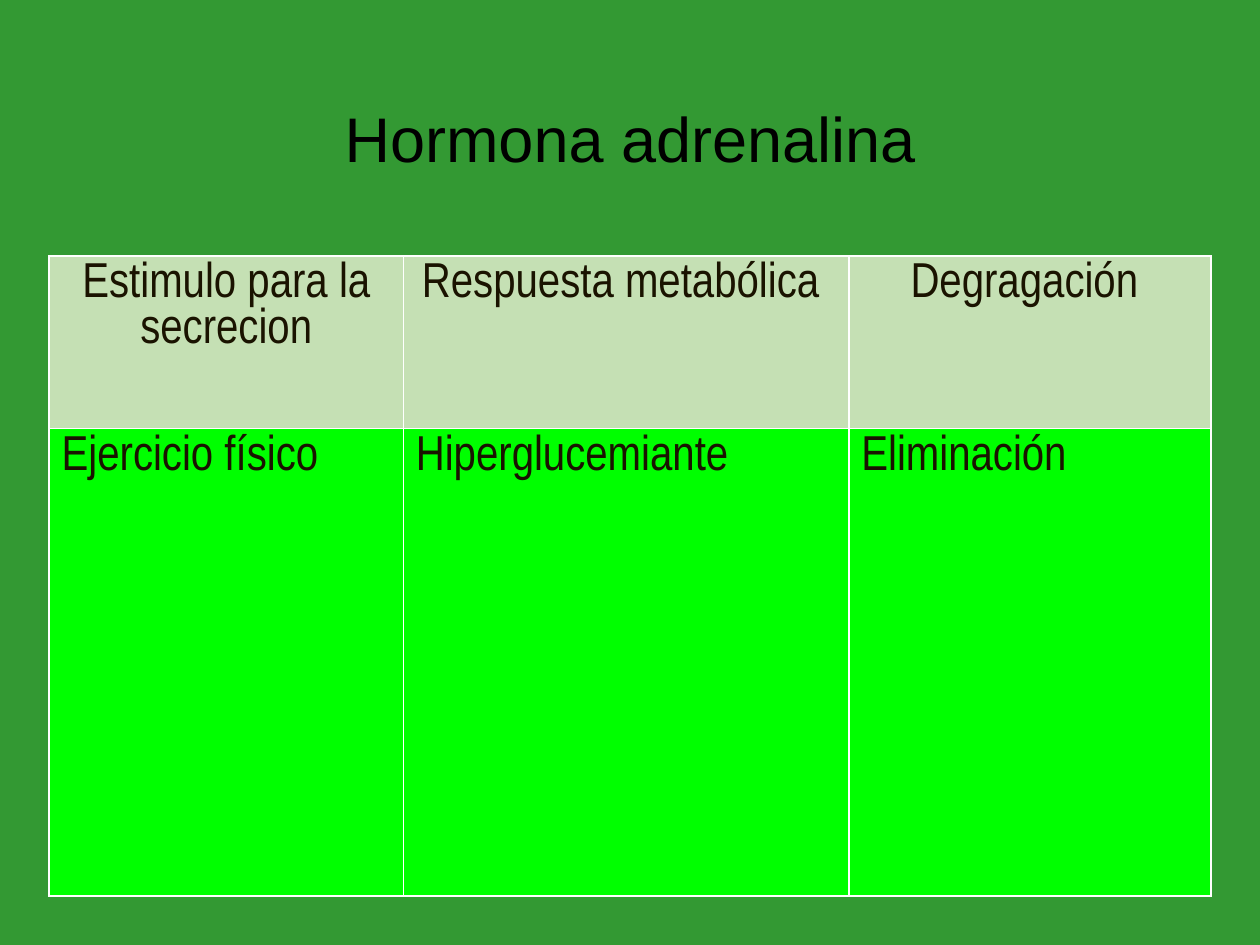
from dataclasses import dataclass

from lxml import etree
from pptx import Presentation
from pptx import util as u
from pptx.dml.color import RGBColor
from pptx.enum import text
from pptx.oxml.ns import qn


@dataclass(frozen=True)
class Theme:
    background: str = "339933"
    title_color: str = "000000"
    title_font: str = "Arial"
    title_size: int = 36
    cell_color: str = "1A1300"
    cell_font: str = "Arial Narrow"
    cell_size: int = 28
    header_fill: str = "C5E0B4"
    body_fill: str = "00FF00"
    border: str = "FFFFFF"
    border_width: int = 1


class SlideBuilder:
    def __init__(self, slide, theme):
        self.slide = slide
        self.theme = theme

    def background(self):
        fill = self.slide.background.fill
        fill.solid()
        fill.fore_color.rgb = RGBColor.from_string(self.theme.background)

    def set_text(self, tf, content, font, size, color, align):
        tf.text = content
        p = tf.paragraphs[0]
        p.alignment = align
        for r in p.runs:
            r.font.name = font
            r.font.size = u.Pt(size)
            r.font.bold = False
            r.font.color.rgb = RGBColor.from_string(color)
        return p

    def title(self, content, left, top, width, height):
        th = self.theme
        box = self.slide.shapes.add_textbox(
            u.Cm(left), u.Cm(top), u.Cm(width), u.Cm(height))
        tf = box.text_frame
        tf.word_wrap = True
        tf.vertical_anchor = text.MSO_ANCHOR.MIDDLE
        p = self.set_text(tf, content, th.title_font, th.title_size,
                          th.title_color, text.PP_ALIGN.CENTER)
        p.line_spacing = 0.9

    def borders(self, cell):
        # Borders come before the fill in the cell properties
        tc_pr = cell._tc.get_or_add_tcPr()
        for i, side in enumerate(("lnL", "lnR", "lnT", "lnB")):
            ln = etree.Element(qn(f"a:{side}"),
                               w=str(u.Pt(self.theme.border_width)))
            fill = etree.SubElement(ln, qn("a:solidFill"))
            etree.SubElement(fill, qn("a:srgbClr"), val=self.theme.border)
            tc_pr.insert(i, ln)

    def table(self, rows, left, top, widths, heights):
        th = self.theme
        table = self.slide.shapes.add_table(
            len(rows), len(widths), u.Cm(left), u.Cm(top),
            u.Cm(sum(widths)), u.Cm(sum(heights))).table
        for column, width in zip(table.columns, widths):
            column.width = u.Cm(width)
        for row, height in zip(table.rows, heights):
            row.height = u.Cm(height)
        for i, row in enumerate(rows):
            fill = th.body_fill if i else th.header_fill
            align = text.PP_ALIGN.LEFT if i else text.PP_ALIGN.CENTER
            for j, content in enumerate(row):
                cell = table.cell(i, j)
                cell.fill.solid()
                cell.fill.fore_color.rgb = RGBColor.from_string(fill)
                self.borders(cell)
                self.set_text(cell.text_frame, content, th.cell_font,
                              th.cell_size, th.cell_color, align)


def main():
    prs = Presentation()
    prs.slide_width, prs.slide_height = u.Cm(25.4), u.Cm(19.05)
    builder = SlideBuilder(prs.slides.add_slide(prs.slide_layouts[6]), Theme())
    builder.background()

    # Hormone table: stimulus, response, breakdown
    builder.table(
        [("Estimulo para la secrecion", "Respuesta metabólica ", "Degragación "),
         ("Ejercicio físico", "Hiperglucemiante", "Eliminación")],
        left=0.99, top=5.16, widths=(7.14, 8.98, 7.3), heights=(3.48, 9.42))

    # Title
    builder.title("Hormona adrenalina", 1.75, 1.02, 21.9, 3.68)

    prs.save("out.pptx")


if __name__ == "__main__":
    main()
